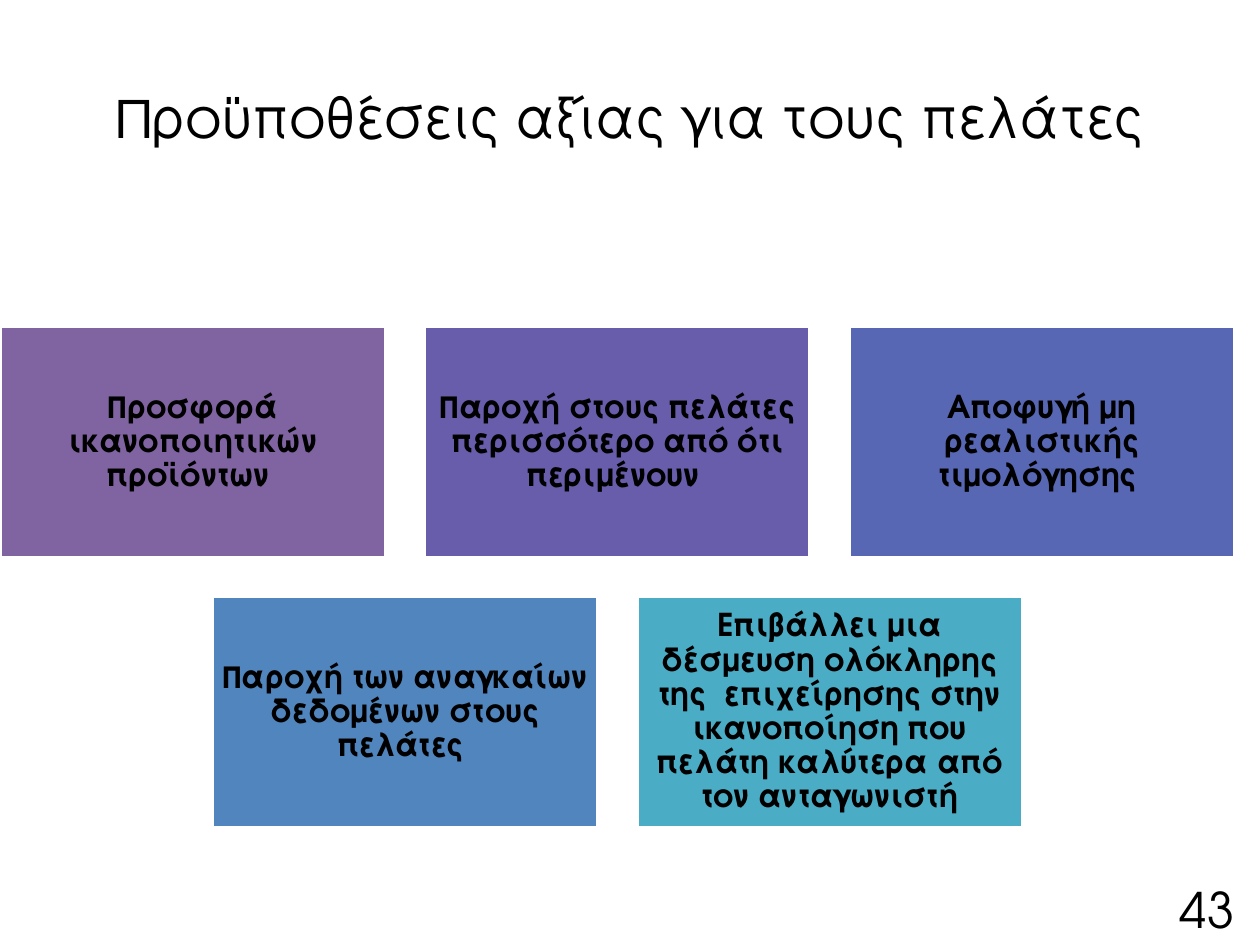
import dataclasses

import pptx
import pptx.dml.color
import pptx.enum.shapes
import pptx.enum.text
import pptx.util

Inches = pptx.util.Inches
Pt = pptx.util.Pt
RGB = pptx.dml.color.RGBColor
ALIGN = pptx.enum.text.PP_ALIGN
ANCHOR = pptx.enum.text.MSO_ANCHOR


@dataclasses.dataclass(frozen=True)
class Theme:
    """Font, colours and type sizes of the slide."""
    font: str = "TeX Gyre Adventor"
    ink: str = "000000"
    edge: str = "FFFFFF"
    title: int = 32
    card: int = 18
    number: int = 28


THEME = Theme()
WIDTH, HEIGHT, GAP = 3.06, 1.84, 0.31
SPAN, TOP, STEP = 9.8, 2.59, 2.14
ROWS = [
    [("Προσφορά ικανοποιητικών προϊόντων ", "8064A2"),
     ("Παροχή στους πελάτες περισσότερο από ότι περιμένουν ", "685DAB"),
     ("Αποφυγή μη ρεαλιστικής τιμολόγησης ", "5767B4")],
    [("Παροχή των αναγκαίων δεδομένων στους πελάτες ", "5185BD"),
     ("Επιβάλλει μια δέσμευση ολόκληρης της  επιχείρησης στην ικανοποίηση "
      "που πελάτη καλύτερα από τον ανταγωνιστή", "4BACC6")],
]


def write(frame, text, size, bold=False, space=1.0):
    """Fill a text frame with one centred, styled paragraph."""
    frame.text = text
    para = frame.paragraphs[0]
    para.alignment = ALIGN.CENTER
    para.line_spacing = space
    for run in para.runs:
        run.font.name = THEME.font
        run.font.size = Pt(size)
        run.font.bold = bold
        run.font.color.rgb = RGB.from_string(THEME.ink)


def add_title(slide, text):
    """Place and fill the title placeholder."""
    title = slide.shapes.title
    title.left, title.top = Inches(0.5), Inches(0.3)
    title.width, title.height = Inches(9), Inches(1.25)
    title.text_frame.vertical_anchor = ANCHOR.MIDDLE
    write(title.text_frame, text, THEME.title)


def add_card(slide, left, top, text, fill):
    """Draw one filled card with its label."""
    card = slide.shapes.add_shape(
        pptx.enum.shapes.MSO_SHAPE.RECTANGLE,
        Inches(left), Inches(top), Inches(WIDTH), Inches(HEIGHT))
    card.shadow.inherit = False
    card.fill.solid()
    card.fill.fore_color.rgb = RGB.from_string(fill)
    card.line.color.rgb = RGB.from_string(THEME.edge)
    card.line.width = Pt(2)
    frame = card.text_frame
    frame.word_wrap = True
    frame.vertical_anchor = ANCHOR.MIDDLE
    frame.margin_left = frame.margin_right = Inches(0.07)
    frame.margin_top = frame.margin_bottom = Inches(0.07)
    write(frame, text, THEME.card, bold=True, space=0.9)


def add_row(slide, top, cards):
    """Centre a row of cards within the span."""
    used = len(cards) * (WIDTH + GAP) - GAP
    start = (SPAN - used) / 2
    for col, (text, fill) in enumerate(cards):
        add_card(slide, start + col * (WIDTH + GAP), top, text, fill)


def add_number(slide, text):
    """Put the page number in the lower right corner."""
    box = slide.shapes.add_textbox(
        Inches(9.26), Inches(6.98), Inches(0.64), Inches(0.52))
    frame = box.text_frame
    frame.word_wrap = False
    frame.auto_size = pptx.enum.text.MSO_AUTO_SIZE.SHAPE_TO_FIT_TEXT
    write(frame, text, THEME.number, space=0.9)


def main():
    """Build and save the slide."""
    deck = pptx.Presentation()
    deck.slide_width, deck.slide_height = Inches(10), Inches(7.5)
    slide = deck.slides.add_slide(deck.slide_layouts.get_by_name("Title Only"))
    add_title(slide, "Προϋποθέσεις αξίας για τους πελάτες")
    for index, cards in enumerate(ROWS):
        add_row(slide, TOP + index * STEP, cards)
    add_number(slide, "43")
    deck.save("out.pptx")


if __name__ == "__main__":
    main()
